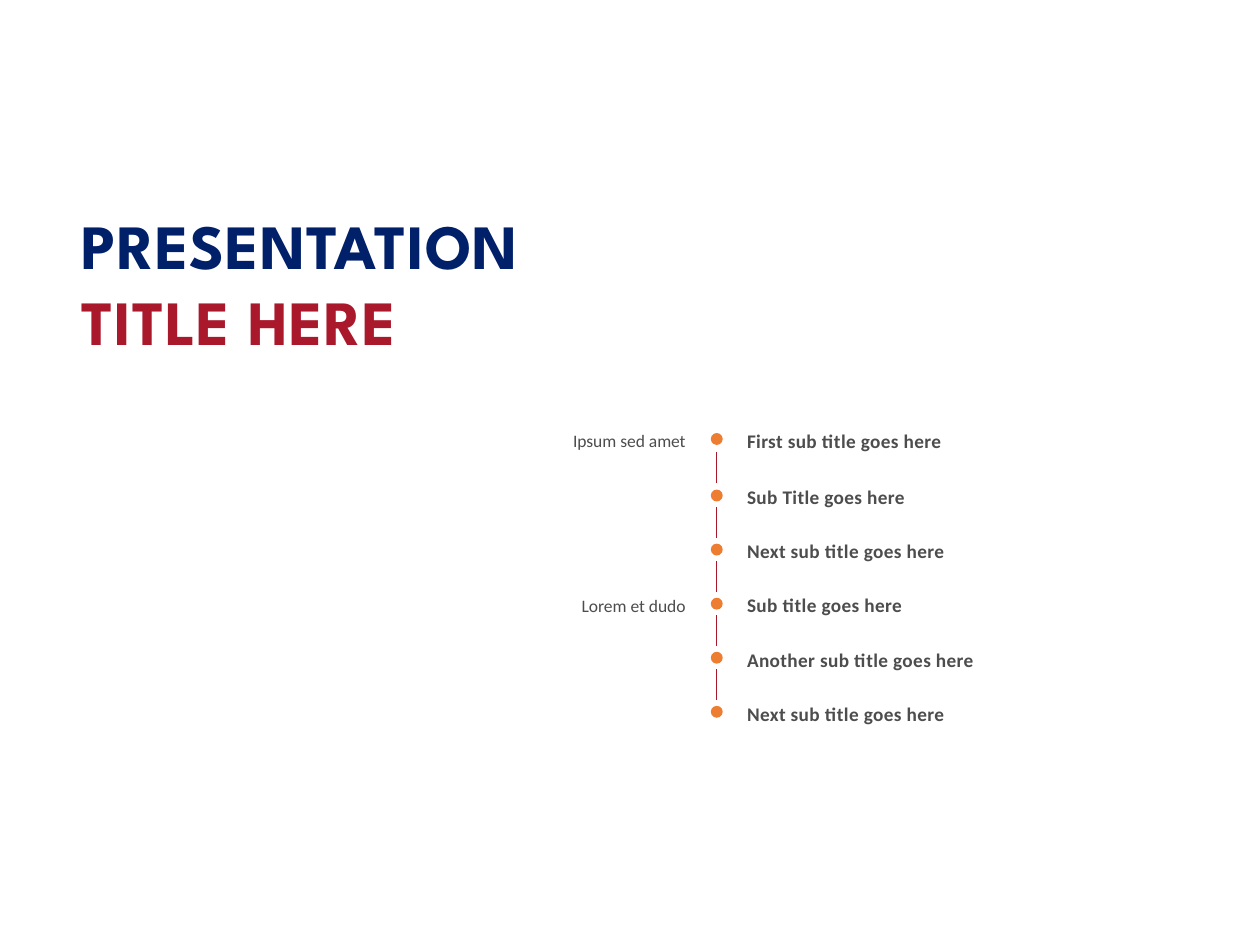
from dataclasses import dataclass

from lxml import etree
from pptx import Presentation
from pptx import util as u
from pptx.dml.color import RGBColor
from pptx.enum import shapes, text
from pptx.oxml.ns import qn


@dataclass(frozen=True)
class TextStyle:
    font: str
    size: float
    colors: tuple[str, ...]  # one per paragraph
    bold: bool = False
    tracking: float = 0  # points
    align: text.PP_ALIGN = text.PP_ALIGN.LEFT


@dataclass(frozen=True)
class Theme:
    dot: str = "ED7D31"
    link: str = "AA182C"
    link_width: float = 0.75
    title: TextStyle = TextStyle("League Spartan", 36, ("002069", "AA182C"), True, 0.5)
    topic: TextStyle = TextStyle("Calibri", 11, ("4D4D4D",), True, 0.2)
    section: TextStyle = TextStyle("Calibri", 10, ("4D4D4D",), align=text.PP_ALIGN.RIGHT)


@dataclass(frozen=True)
class Milestone:
    topic: str
    center: float  # cm from the top of the slide
    section: str = ""


THEME = Theme()
SECOND_CENTER, STEP = 9.99, 1.09
AXIS, DOT_SIZE, LINK_LENGTH = 14.45, 0.24, 0.63

MILESTONES = [
    Milestone("First sub title goes here", 8.85, "Ipsum sed amet"),
    Milestone("Sub Title goes here", SECOND_CENTER),
    Milestone("Next sub title goes here", SECOND_CENTER + STEP),
    Milestone("Sub title goes here", SECOND_CENTER + 2 * STEP, "Lorem et dudo"),
    Milestone("Another sub title goes here", SECOND_CENTER + 3 * STEP),
    Milestone("Next sub title goes here", SECOND_CENTER + 4 * STEP),
]


def add_text(container, content: str, left: float, top: float,
             width: float, height: float, style: TextStyle) -> None:
    """Add an unpadded text box, with lengths in centimetres."""
    box = container.add_textbox(u.Cm(left), u.Cm(top), u.Cm(width), u.Cm(height))
    frame = box.text_frame
    frame.margin_left = frame.margin_right = frame.margin_top = frame.margin_bottom = 0
    frame.word_wrap = True
    frame.auto_size = text.MSO_AUTO_SIZE.SHAPE_TO_FIT_TEXT
    frame.text = content
    for paragraph, color in zip(frame.paragraphs, style.colors):
        paragraph.alignment = style.align
        for run in paragraph.runs:
            run.font.name = style.font
            run.font.size = u.Pt(style.size)
            run.font.bold = style.bold
            run.font.color.rgb = RGBColor.from_string(color)
            if style.tracking:
                run._r.get_or_add_rPr().set("spc", str(round(style.tracking * 100)))


def add_dot(container, center: float) -> None:
    dot = container.add_shape(
        shapes.MSO_SHAPE.OVAL, u.Cm(AXIS - DOT_SIZE / 2), u.Cm(center - DOT_SIZE / 2),
        u.Cm(DOT_SIZE), u.Cm(DOT_SIZE))
    dot.shadow.inherit = False
    dot.fill.solid()
    dot.fill.fore_color.rgb = RGBColor.from_string(THEME.dot)
    dot.line.fill.background()


def add_link(container, upper: Milestone, lower: Milestone) -> None:
    """Add a vertical line centred between two milestones."""
    middle = (upper.center + lower.center) / 2
    link = container.add_connector(
        shapes.MSO_CONNECTOR.STRAIGHT, u.Cm(AXIS), u.Cm(middle - LINK_LENGTH / 2),
        u.Cm(AXIS), u.Cm(middle + LINK_LENGTH / 2))
    link.line.color.rgb = RGBColor.from_string(THEME.link)
    link.line.width = u.Pt(THEME.link_width)
    etree.SubElement(link._element.spPr, qn("a:effectLst"))


def add_milestone(container, milestone: Milestone) -> None:
    add_text(container, milestone.topic, 15.06, milestone.center - 0.2,
             8.69, 0.47, THEME.topic)
    add_dot(container, milestone.center)
    if milestone.section:
        add_text(container, milestone.section, 11.2, milestone.center - 0.18,
                 2.62, 0.43, THEME.section)


def main() -> None:
    presentation = Presentation()
    presentation.slide_width, presentation.slide_height = u.Cm(25.4), u.Cm(19.05)
    slide = presentation.slides.add_slide(presentation.slide_layouts[6])

    add_text(slide.shapes, "PRESENTATION\nTITLE HERE", 1.65, 4.17, 22.1, 3.07, THEME.title)

    timeline = slide.shapes.add_group_shape().shapes
    for milestone in MILESTONES:
        add_milestone(timeline, milestone)
    for upper, lower in zip(MILESTONES, MILESTONES[1:]):
        add_link(timeline, upper, lower)

    presentation.save("out.pptx")


if __name__ == "__main__":
    main()
